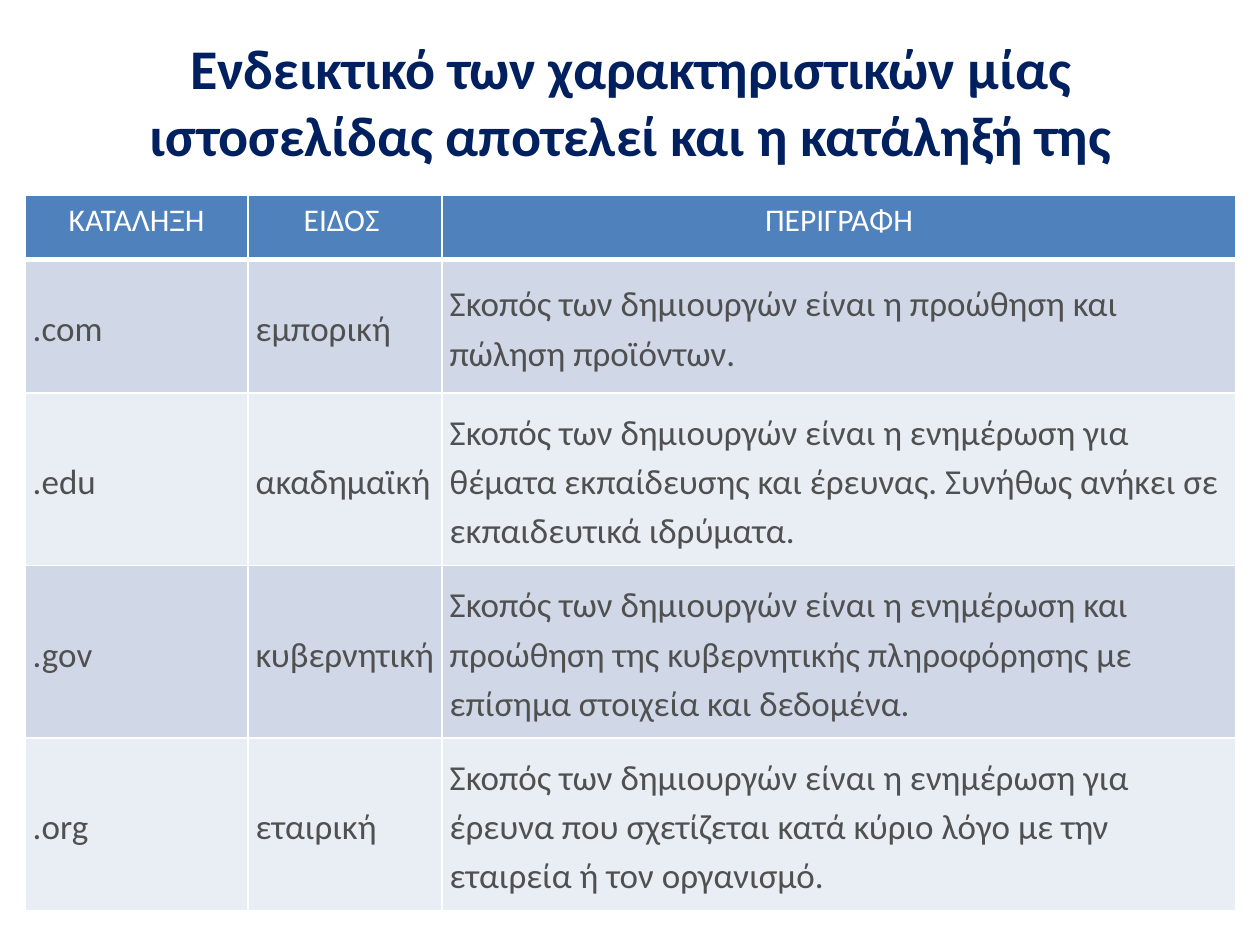
from pptx import Presentation
from pptx.dml.color import RGBColor
from pptx.enum.text import MSO_ANCHOR, PP_ALIGN
from pptx.oxml import parse_xml
from pptx.oxml.ns import nsdecls
from pptx.util import Inches, Pt

COLORS = {
    "title": "002060",
    "header": "4F81BD",
    "header_text": "FFFFFF",
    "body_text": "505050",
    "band_dark": "D0D8E8",
    "band_light": "E9EDF4",
    "border": "FFFFFF",
}

TITLE = "Ενδεικτικό των χαρακτηριστικών μίας ιστοσελίδας αποτελεί και η κατάληξή της"
HEADERS = ["ΚΑΤΑΛΗΞΗ", "ΕΙΔΟΣ ", "ΠΕΡΙΓΡΑΦΗ"]
DOMAINS = [
    (".com", "εμπορική",
     "Σκοπός των δημιουργών είναι η προώθηση και πώληση προϊόντων."),
    (".edu", "ακαδημαϊκή",
     "Σκοπός των δημιουργών είναι η ενημέρωση για θέματα εκπαίδευσης και έρευνας. "
     "Συνήθως ανήκει σε εκπαιδευτικά ιδρύματα."),
    (".gov", "κυβερνητική",
     "Σκοπός των δημιουργών είναι η ενημέρωση και προώθηση της κυβερνητικής "
     "πληροφόρησης με επίσημα στοιχεία και δεδομένα."),
    (".org", "εταιρική",
     "Σκοπός των δημιουργών είναι η ενημέρωση για έρευνα που σχετίζεται κατά κύριο "
     "λόγο με την εταιρεία ή τον οργανισμό."),
]
COLUMN_WIDTHS = [1.77, 1.54, 6.3]
ROW_HEIGHTS = [0.51, 1.06, 1.37, 1.37, 1.37]


class SlideBuilder:
    """Holds the style and the current slide."""

    font = "Calibri"

    def __init__(self, slide):
        self.slide = slide

    def add_run(self, para, text, size, color, bold=False):
        span = para.add_run()
        span.text = text
        span.font.name = self.font
        span.font.size = Pt(size)
        span.font.bold = bold
        span.font.color.rgb = RGBColor.from_string(COLORS[color])

    def set_title(self, text, left, top, width, height):
        box = self.slide.shapes.title
        box.left, box.top = Inches(left), Inches(top)
        box.width, box.height = Inches(width), Inches(height)
        box.text_frame.word_wrap = True
        box.text_frame.vertical_anchor = MSO_ANCHOR.MIDDLE
        para = box.text_frame.paragraphs[0]
        para.alignment = PP_ALIGN.CENTER
        self.add_run(para, text, 32, "title", bold=True)

    def set_borders(self, cell, bottom):
        properties = cell._tc.get_or_add_tcPr()
        widths = {"lnL": 1, "lnR": 1, "lnT": 1, "lnB": bottom}
        for position, (side, width) in enumerate(widths.items()):
            properties.insert(position, parse_xml(
                f'<a:{side} {nsdecls("a")} w="{Pt(width)}"><a:solidFill>'
                f'<a:srgbClr val="{COLORS["border"]}"/></a:solidFill></a:{side}>'))

    def fill_cell(self, cell, text, fill, is_header):
        cell.fill.solid()
        cell.fill.fore_color.rgb = RGBColor.from_string(COLORS[fill])
        self.set_borders(cell, bottom=3 if is_header else 1)
        para = cell.text_frame.paragraphs[0]
        if is_header:
            para.alignment = PP_ALIGN.CENTER
            self.add_run(para, text, 18, "header_text")
            return
        cell.vertical_anchor = MSO_ANCHOR.MIDDLE
        cell.margin_left = cell.margin_right = Inches(0.06)
        cell.margin_top = cell.margin_bottom = Inches(0.02)
        para.line_spacing = 1.15
        self.add_run(para, text, 20, "body_text")

    def add_table(self, rows, left, top, widths, heights):
        table = self.slide.shapes.add_table(
            len(rows), len(widths), Inches(left), Inches(top),
            Inches(sum(widths)), Inches(sum(heights))).table
        for column, width in zip(table.columns, widths):
            column.width = Inches(width)
        for index, (row, height) in enumerate(zip(table.rows, heights)):
            row.height = Inches(height)
            is_header = index == 0
            band = "band_dark" if index % 2 else "band_light"
            for cell, text in zip(row.cells, rows[index]):
                self.fill_cell(cell, text, "header" if is_header else band, is_header)


def main():
    deck = Presentation()
    deck.slide_width, deck.slide_height = Inches(10), Inches(7.5)
    page = deck.slides.add_slide(deck.slide_layouts[5])
    builder = SlideBuilder(page)

    # Title
    builder.set_title(TITLE, 0.51, 0.29, 9, 1.02)

    # Table of domain endings
    builder.add_table([HEADERS, *DOMAINS], 0.2, 1.55, COLUMN_WIDTHS, ROW_HEIGHTS)

    deck.save("out.pptx")


if __name__ == "__main__":
    main()
